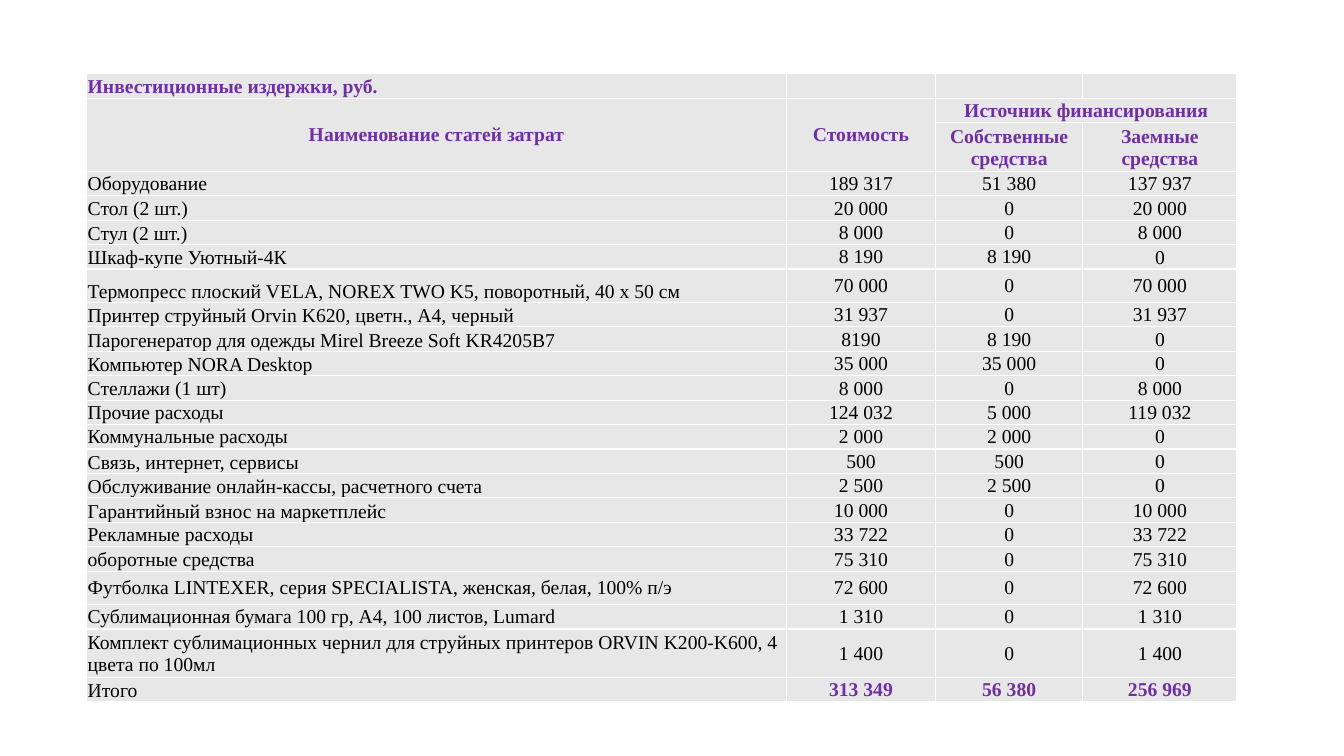
from lxml import etree
from pptx import Presentation, util as u
from pptx.dml.color import RGBColor
from pptx.enum import text
from pptx.oxml.ns import qn

theme = {
    "face": "Times New Roman", "size": 14, "rule": 1,
    "fill": "E7E7E7", "edge": "FFFFFF", "accent": "7030A0", "ink": "000000",
}

costs = [
    ["Инвестиционные издержки, руб.", "", "", ""],
    ["Наименование статей затрат", "Стоимость", "Источник финансирования", ""],
    ["", "", "Собственные средства", "Заемные средства"],
    ["Оборудование", "189 317", "51 380", "137 937"],
    ["Стол (2 шт.)", "20 000", "0", "20 000"],
    ["Стул (2 шт.)", "8 000", "0", "8 000"],
    ["Шкаф-купе Уютный-4К", "8 190", "8 190", "0"],
    ["Термопресс плоский VELA, NOREX TWO K5, поворотный, 40 х 50 см", "70 000", "0", "70 000"],
    ["Принтер струйный Orvin K620, цветн., A4, черный", "31 937", "0", "31 937"],
    ["Парогенератор для одежды Mirel Breeze Soft KR4205B7", "8190", "8 190", "0"],
    ["Компьютер NORA Desktop", "35 000", "35 000", "0"],
    ["Стеллажи (1 шт)", "8 000", "0", "8 000"],
    ["Прочие расходы", "124 032", "5 000", "119 032"],
    ["Коммунальные расходы", "2 000", "2 000", "0"],
    ["Связь, интернет, сервисы", "500", "500", "0"],
    ["Обслуживание онлайн-кассы, расчетного счета", "2 500", "2 500", "0"],
    ["Гарантийный взнос на маркетплейс", "10 000", "0", "10 000"],
    ["Рекламные расходы", "33 722", "0", "33 722"],
    ["оборотные средства", "75 310", "0", "75 310"],
    ["Футболка LINTEXER, серия SPECIALISTA, женская, белая, 100% п/э", "72 600", "0", "72 600"],
    ["Сублимационная бумага 100 гр, А4, 100 листов, Lumard", "1 310", "0", "1 310"],
    ["Комплект сублимационных чернил для струйных принтеров ORVIN K200-K600, 4 цвета по 100мл",
     "1 400", "0", "1 400"],
    ["Итого", "313 349", "56 380", "256 969"],
]
last = len(costs) - 1
wides = [6.94, 1.48, 1.46, 1.53]
high = 6.23
tall = {2: 0.48, 7: 0.33, 19: 0.33, 21: 0.48}
base = (high - sum(tall.values())) / (len(costs) - len(tall))
low = {(row, 0) for row in (*range(4, 12), *range(14, 17), last)} | {(6, 3)}

deck = Presentation()
deck.slide_width, deck.slide_height = u.Inches(13.33), u.Inches(7.5)
slide = deck.slides.add_slide(deck.slide_layouts[6])
frame = slide.shapes.add_table(
    len(costs), len(wides), u.Inches(0.86), u.Inches(0.73),
    u.Inches(sum(wides)), u.Inches(high))
table = frame.table
table.first_row = table.horz_banding = False
for col, wide in enumerate(wides):
    table.columns[col].width = u.Inches(wide)

inset = {"margin_left": u.Inches(0.01), "margin_right": u.Inches(0.01),
         "margin_top": u.Inches(0.01), "margin_bottom": 0}

for row, line in enumerate(costs):
    table.rows[row].height = u.Inches(tall.get(row, base))
    for col, words in enumerate(line):
        cell = table.cell(row, col)
        for key, val in inset.items():
            setattr(cell, key, val)
        cell.vertical_anchor = text.MSO_ANCHOR.BOTTOM if (row, col) in low else text.MSO_ANCHOR.MIDDLE

        props = cell._tc.get_or_add_tcPr()
        for side in ("lnL", "lnR", "lnT", "lnB"):
            edge = etree.SubElement(props, qn("a:" + side), w=str(u.Pt(theme["rule"])))
            paint = etree.SubElement(edge, qn("a:solidFill"))
            etree.SubElement(paint, qn("a:srgbClr"), val=theme["edge"])
        cell.fill.solid()
        cell.fill.fore_color.rgb = RGBColor.from_string(theme["fill"])

        para = cell.text_frame.paragraphs[0]
        if col or row in (1, 2):
            para.alignment = text.PP_ALIGN.CENTER
        if words:
            run = para.add_run()
            run.text = words
            strong = row < 3 or (row == last and col > 0)
            style = {"name": theme["face"], "size": u.Pt(theme["size"]), "bold": strong}
            for key, val in style.items():
                setattr(run.font, key, val)
            run.font.color.rgb = RGBColor.from_string(theme["accent" if strong else "ink"])
        else:
            etree.SubElement(para._p, qn("a:endParaRPr"), sz=str(theme["size"] * 100))

for start, end in [((1, 0), (2, 0)), ((1, 1), (2, 1)), ((1, 2), (1, 3))]:
    table.cell(*start).merge(table.cell(*end))

deck.save("out.pptx")
